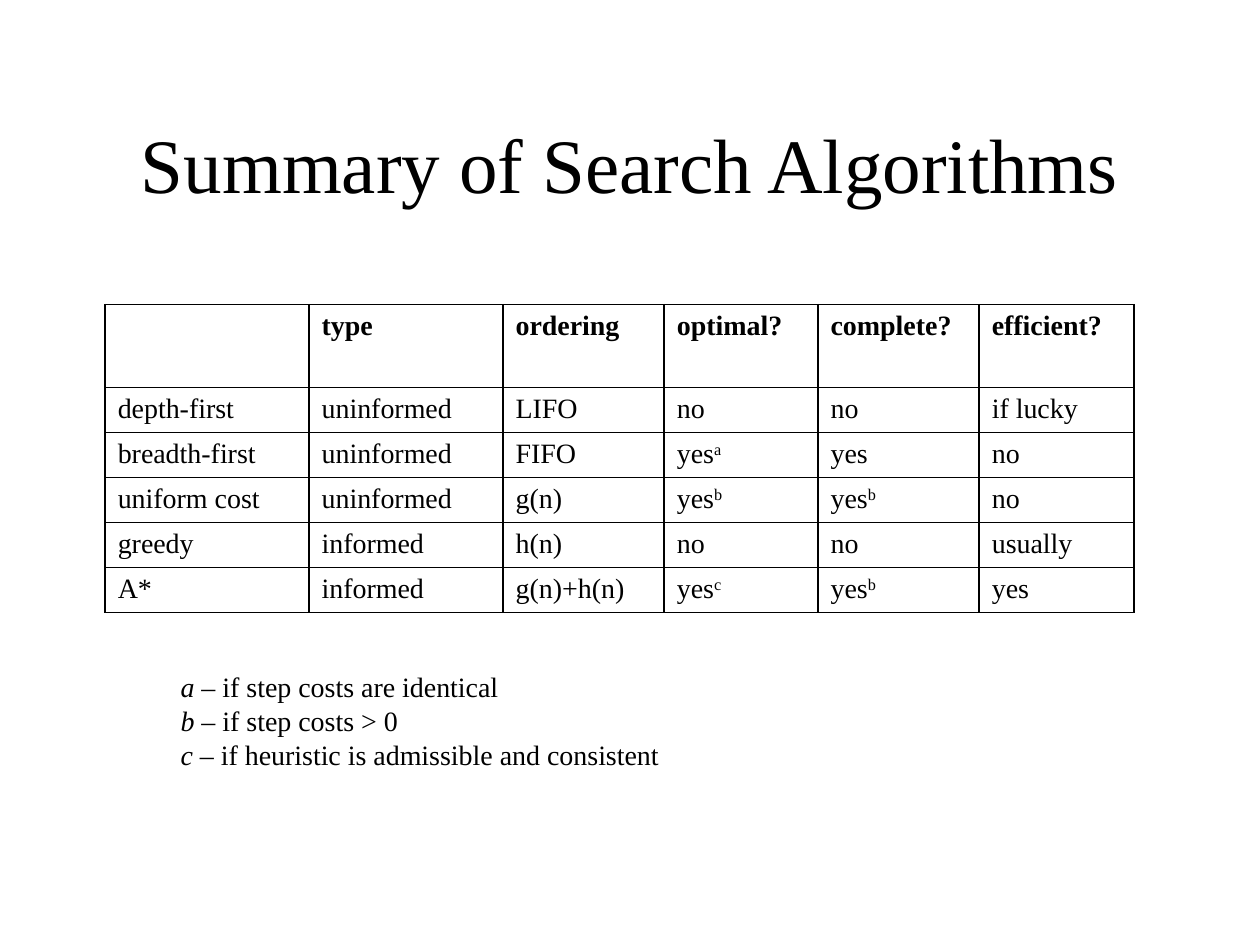
import pptx
import pptx.dml.color
import pptx.enum.text
import pptx.oxml
import pptx.oxml.ns
import pptx.util

Cm = pptx.util.Cm
BLACK = "000000"
FONT = "Times New Roman"
COLUMN_WIDTHS = [4.11, 3.91, 3.25, 3.1, 3.25, 3.12]
HEADER_HEIGHT, ROW_HEIGHT = 1.67, 0.88

# A caret marks the start of a superscript.
ALGORITHMS = [
    ["", "type", "ordering", "optimal?", "complete?", "efficient?"],
    ["depth-first", "uninformed", "LIFO", "no", "no", "if lucky"],
    ["breadth-first", "uninformed", "FIFO", "yes^a", "yes", "no"],
    ["uniform cost", "uninformed", "g(n)", "yes^b", "yes^b", "no"],
    ["greedy", "informed", "h(n)", "no", "no", "usually"],
    ["A*", "informed", "g(n)+h(n)", "yes^c", "yes^b", "yes"],
]
FOOTNOTES = {
    "a": "if step costs are identical",
    "b": "if step costs > 0",
    "c": "if heuristic is admissible and consistent",
}


def color(value):
    return pptx.dml.color.RGBColor.from_string(value)


def set_attributes(target, values):
    for name, value in values.items():
        setattr(target, name, value)


def add_span(para, text, size=16, **formats):
    span = para.add_run()
    span.text = text
    set_attributes(span.font, {"name": FONT, "size": pptx.util.Pt(size), **formats})
    span.font.color.rgb = color(BLACK)
    return span


def add_text_box(page, box, **formats):
    frame = page.shapes.add_textbox(*map(Cm, box)).text_frame
    set_attributes(frame, {"word_wrap": True, **formats})
    return frame


def add_title(page, box, text):
    frame = add_text_box(page, box, vertical_anchor=pptx.enum.text.MSO_ANCHOR.MIDDLE)
    para = frame.paragraphs[0]
    para.alignment = pptx.enum.text.PP_ALIGN.CENTER
    add_span(para, text, size=44)


def add_borders(cell, width=1):
    properties = cell._tc.get_or_add_tcPr()
    for position, side in enumerate(("lnL", "lnR", "lnT", "lnB")):
        line = pptx.oxml.parse_xml(
            f'<a:{side} {pptx.oxml.ns.nsdecls("a")} w="{pptx.util.Pt(width)}">'
            f'<a:solidFill><a:srgbClr val="{BLACK}"/></a:solidFill></a:{side}>'
        )
        properties.insert(position, line)


def fill_cell(cell, text, bold):
    set_attributes(cell, {"margin_top": Cm(0.12), "margin_bottom": Cm(0.11)})
    cell.fill.background()
    add_borders(cell)
    base, _, mark = text.partition("^")
    para = cell.text_frame.paragraphs[0]
    para.font.size = pptx.util.Pt(16)
    if base:
        add_span(para, base, bold=bold)
    if mark:
        span = add_span(para, mark, bold=bold)
        span.font._element.set("baseline", "30000")


def add_summary_table(page, left, top, rows):
    heights = [HEADER_HEIGHT] + [ROW_HEIGHT] * (len(rows) - 1)
    size = (sum(COLUMN_WIDTHS), sum(heights))
    table = page.shapes.add_table(
        len(rows), len(COLUMN_WIDTHS), *map(Cm, (left, top, *size))
    ).table
    set_attributes(table, {"first_row": False, "horz_banding": False})
    for column, width in zip(table.columns, COLUMN_WIDTHS):
        column.width = Cm(width)
    for row_index, (row, height, texts) in enumerate(zip(table.rows, heights, rows)):
        row.height = Cm(height)
        for cell, text in zip(row.cells, texts):
            fill_cell(cell, text, bold=row_index == 0)


def add_footnotes(page, box, notes):
    frame = add_text_box(page, box, margin_left=Cm(1.52))
    for index, (mark, text) in enumerate(notes.items()):
        para = frame.add_paragraph() if index else frame.paragraphs[0]
        add_span(para, mark, italic=True)
        add_span(para, f" – {text}", italic=False)


def main():
    deck = pptx.Presentation()
    set_attributes(deck, {"slide_width": Cm(25.4), "slide_height": Cm(19.05)})
    page = deck.slides.add_slide(deck.slide_layouts[6])
    add_title(page, (1.9, 1.7, 21.6, 3.18), "Summary of Search Algorithms")
    add_summary_table(page, 2.12, 6.14, ALGORITHMS)
    add_footnotes(page, (2.12, 13.38, 14.18, 2.29), FOOTNOTES)
    deck.save("out.pptx")


if __name__ == "__main__":
    main()
